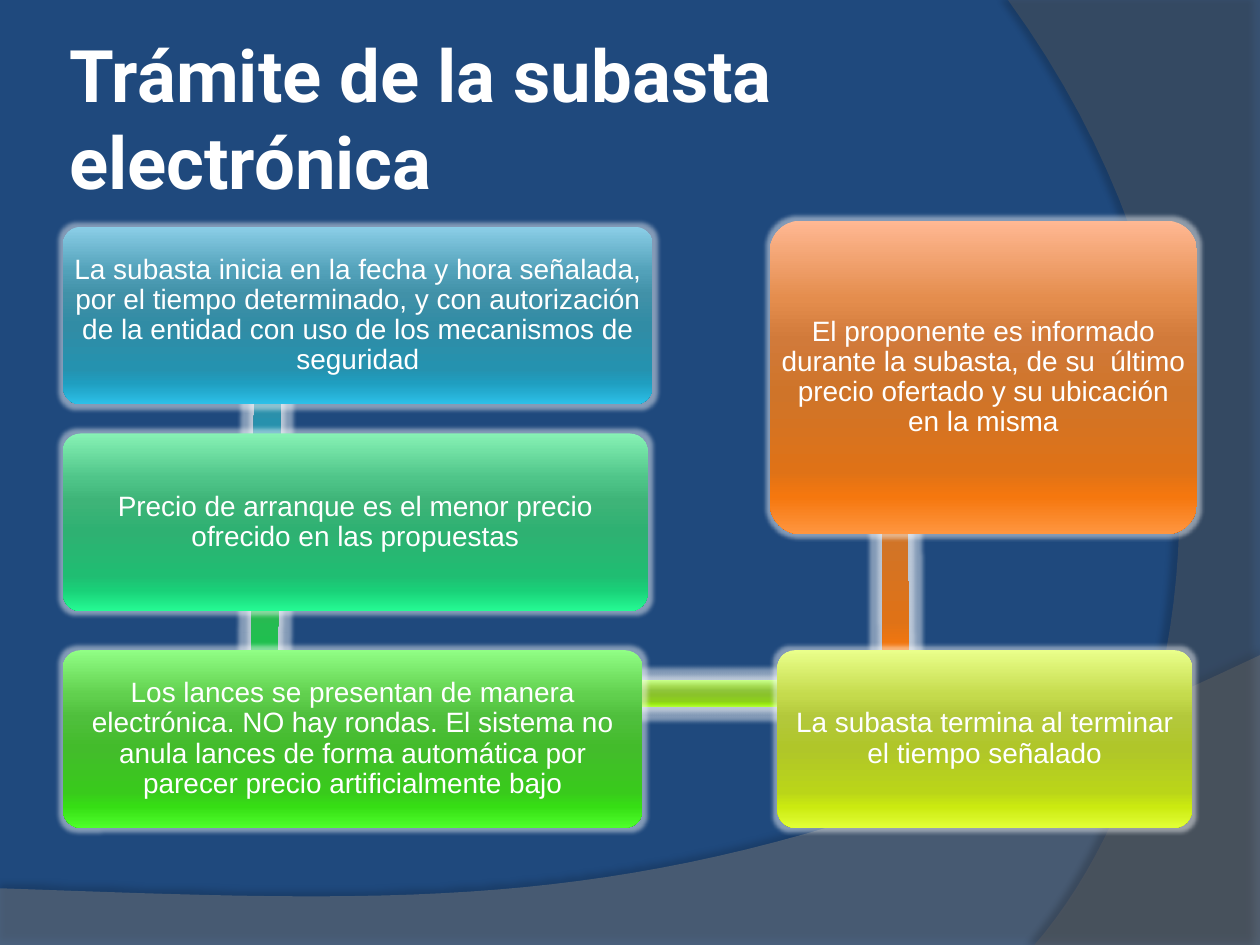
from dataclasses import dataclass

from lxml import etree
from pptx import Presentation
from pptx import util as u
from pptx.dml import color
from pptx.enum import shapes, text
from pptx.oxml import ns


@dataclass(frozen=True)
class Theme:
    back: str = "1F497D"
    ink: str = "FFFFFF"
    wave: str = "7F7F7F"
    arc: str = "5E5E5E"
    shade: str = "000000"
    glow: str = "FFFFFF"
    head: str = "Roboto"
    body: str = "Arial"
    big: float = 41.4
    small: float = 16
    stops: tuple = (0, 25, 38, 55, 80, 88, 100)
    blue: str = "8BCEE7 52A1B9 4191A8 318CA5 2592AF 1F9EC0 2CC0E8"
    teal: str = "87F2B5 4FC589 3EB478 2EB172 20BD72 19D078 25FA93"
    mint: str = "86F69D 4FC96F 3DB75E 2DB554 1EC14E 17D44E 23FF62"
    green: str = "91FE85 61D04E 4FBF3C 43BC2B 39CA1C 36DE14 4EFF2B"
    lime: str = "C8FF89 A1D74D 8FC53B 8AC32A 8DD11A 97E611 B2FF32"
    gold: str = "EAFF8B C5DB4D B3C83B B0C629 BAD519 CBEA10 E2FF36"
    fire: str = "FFB893 E48D4D D17A3A CF7429 DF7217 F5770E FF9640"


T = Theme()


def rgb(code):
    return color.RGBColor.from_string(code)


def add(top, tag, **attrs):
    return etree.SubElement(top, ns.qn(tag), {k: str(v) for k, v in attrs.items()})


def tint(top, code, alpha=100):
    clr = add(top, "a:srgbClr", val=code)
    if alpha < 100:
        add(clr, "a:alpha", val=alpha * 1000)


def effect(shape, tag, code, alpha, **attrs):
    shape.shadow.inherit = False
    spot = shape.element.spPr.find(ns.qn("a:effectLst"))
    tint(add(spot, tag, **attrs), code, alpha)


def blend(shape, codes):
    shape.fill.gradient()
    shape.fill.gradient_angle = 270
    grad = shape.element.spPr.find(ns.qn("a:gradFill"))
    grad.set("rotWithShape", "0")
    row = grad.find(ns.qn("a:gsLst"))
    for stop in list(row):
        row.remove(stop)
    for pos, code in zip(T.stops, codes.split()):
        tint(add(row, "a:gs", pos=pos * 1000), code)
    shape.line.fill.background()


def curve(a, b, c, d, count=40):
    for i in range(1, count + 1):
        t = i / count
        s = 1 - t
        yield tuple(s**3 * p + 3 * s * s * t * q + 3 * s * t * t * r + t**3 * e
                    for p, q, r, e in zip(a, b, c, d))


def sweep(slide, points, code, alpha, shade, dist, turn):
    pts = [(u.Inches(x), u.Inches(y)) for x, y in points]
    form = slide.shapes.build_freeform(*pts[0])
    form.add_line_segments(pts[1:], close=True)
    shape = form.convert_to_shape()
    shape.fill.solid()
    shape.fill.fore_color.rgb = rgb(code)
    add(shape.element.spPr.find(ns.qn("a:solidFill"))[0], "a:alpha", val=alpha * 1000)
    shape.line.fill.background()
    effect(shape, "a:outerShdw", T.shade, shade, blurRad=u.Pt(4),
           dist=u.Pt(dist), dir=turn * 60000, rotWithShape=0)


def scene(slide, box):
    x, y, w, h = box
    slide.background.fill.solid()
    slide.background.fill.fore_color.rgb = rgb(T.back)
    end, low = x + w, y + h
    wave = curve((end, y + 5.2), (x + 5.59, y + 7.29), (x + 3.91, y + 7.19), (x, y + 7.05))
    sweep(slide, [(x, low), (end, low), (end, y + 5.2), *wave], T.wave, 45, 35, 3.5, 270)
    arc = curve((x + 8.21, low), (x + 9.35, y + 6.19), (x + 10.18, y + 3), (x + 8, y))
    sweep(slide, [(end, y), (end, low), (x + 8.21, low), *arc], T.arc, 40, 45, 4, 180)


def place(shape, box):
    shape.left, shape.top, shape.width, shape.height = map(u.Inches, box)


def style(shape, words, face, size, bold, align, pad):
    frame = shape.text_frame
    frame.text = words
    frame.word_wrap = True
    frame.auto_size = text.MSO_AUTO_SIZE.NONE
    frame.vertical_anchor = text.MSO_ANCHOR.MIDDLE
    frame.margin_left = frame.margin_right = u.Inches(pad)
    frame.margin_top = frame.margin_bottom = u.Inches(pad)
    para = frame.paragraphs[0]
    para.alignment = align
    font = para.runs[0].font
    font.name, font.size, font.bold = face, u.Pt(size), bold
    font.color.rgb = rgb(T.ink)
    return para


def title(slide, box):
    shape = slide.shapes.title
    place(shape, box)
    style(shape, "Trámite de la subasta electrónica", T.head, T.big, True,
          text.PP_ALIGN.LEFT, 0.05)
    shape.element.getparent().append(shape.element)


def bar(slide, box, codes, turn):
    shape = slide.shapes.add_shape(shapes.MSO_SHAPE.RECTANGLE, *map(u.Inches, box))
    shape.rotation = turn
    blend(shape, codes)
    effect(shape, "a:glow", T.glow, 45, rad=u.Pt(5))


def card(slide, box, codes, words):
    shape = slide.shapes.add_shape(shapes.MSO_SHAPE.ROUNDED_RECTANGLE, *map(u.Inches, box))
    shape.adjustments[0] = 0.1
    blend(shape, codes)
    effect(shape, "a:glow", T.glow, 45, rad=u.Pt(5))
    pad = max(0, 0.07 - 0.03 * box[3])
    para = style(shape, words, T.body, T.small, False, text.PP_ALIGN.CENTER, pad)
    para.line_spacing = 0.9


def flow(slide, box):
    x, y, w, h = box
    thick, tall = 0.21, 1.41
    low = y + h - tall
    steps = [
        ((x, y + 0.05, 4.68, tall), T.blue,
         "La subasta inicia en la fecha y hora señalada, por el tiempo determinado, "
         "y con autorización de la entidad con uso de los mecanismos de seguridad",
         (x + 0.81, y + 1.11, 1.63, thick), T.blue, 90.7),
        ((x, y + 1.69, 4.64, tall), T.teal,
         "Precio de arranque es el menor precio ofrecido en las propuestas",
         (x + 0.75, y + 2.79, 1.71, thick), T.mint, 90.6),
        ((x, low, 4.6, tall), T.green,
         "Los lances se presentan de manera electrónica. NO hay rondas. El sistema "
         "no anula lances de forma automática por parecer precio artificialmente bajo",
         (x + 1.61, low + 0.24, 5, thick), T.lime, 0),
        ((x + 5.67, low, 3.29, tall), T.gold,
         "La subasta termina al terminar el tiempo señalado",
         (x + 5.18, y + 2.22, 2.85, thick), T.fire, 269.7),
    ]
    for spot, codes, words, link, hue, turn in steps:
        bar(slide, link, hue, turn)
        card(slide, spot, codes, words)
    card(slide, (x + w - 3.39, y, 3.39, 2.49), T.fire,
         "El proponente es informado durante la subasta, de su  último precio "
         "ofertado y su ubicación en la misma")


def main():
    deck = Presentation()
    deck.slide_width, deck.slide_height = u.Inches(10), u.Inches(7.5)
    slide = deck.slides.add_slide(deck.slide_layouts[5])
    scene(slide, (0, 0, 10, 7.5))
    title(slide, (0.5, 0.3, 8.17, 1.25))
    flow(slide, (0.5, 1.75, 9, 4.82))
    deck.save("out.pptx")


if __name__ == "__main__":
    main()
